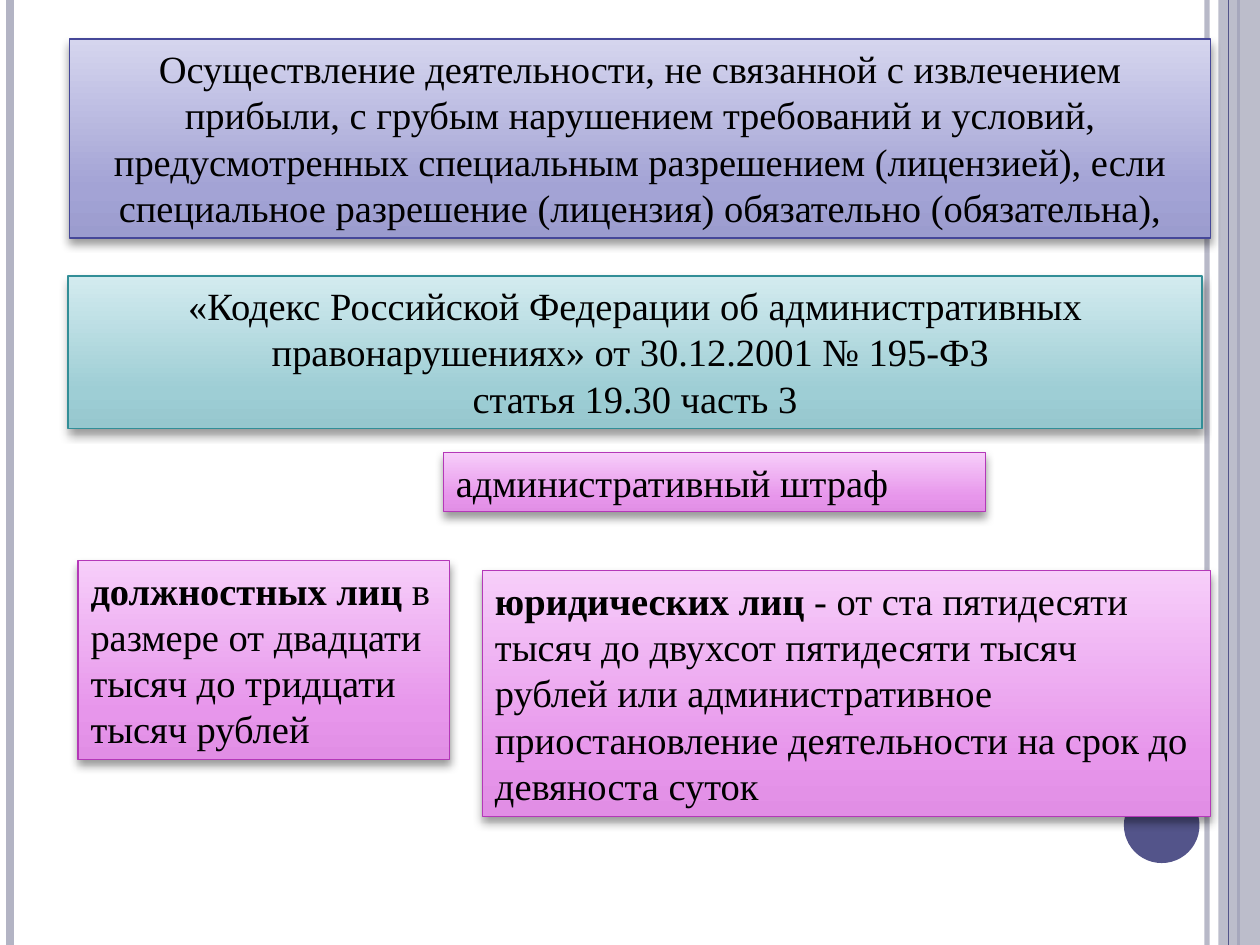
from dataclasses import dataclass

from lxml.etree import SubElement
from pptx import Presentation
from pptx.dml.color import RGBColor
from pptx.enum.shapes import MSO_CONNECTOR, MSO_SHAPE
from pptx.enum.text import MSO_ANCHOR, MSO_AUTO_SIZE, PP_ALIGN
from pptx.oxml.ns import qn
from pptx.util import Inches, Pt


@dataclass(frozen=True)
class Tone:
    line: str
    stops: tuple  # bottom to top, at 0, 25 and 100 percent


@dataclass(frozen=True)
class Theme:
    font: str = "Times New Roman"
    size: float = 22
    ink: str = "000000"
    rail: str = "B3B4C4"
    accent: str = "53548A"
    violet: Tone = Tone("454798", ("9B9CCE", "A3A3D5", "D5D5EE"))
    teal: Tone = Tone("328E97", ("96C7CE", "9ECED5", "D3EBEF"))
    pink: Tone = Tone("B438B8", ("E18EE5", "E796EB", "F7CEFA"))


def add(parent, tag, **attrs):
    return SubElement(parent, qn(tag), {k: str(v) for k, v in attrs.items()})


def fade(element, percent):
    """Set the opacity of the solid colour inside an element."""
    color = next(element.iter(qn("a:srgbClr")))
    add(color, "a:alpha", val=percent * 1000)


class Page:
    def __init__(self, slide, theme):
        self.shapes = slide.shapes
        self.theme = theme

    def rail(self, x, color, width, alpha=100):
        ends = [Inches(n) for n in (x, 0, x, 7.5)]
        rail = self.shapes.add_connector(MSO_CONNECTOR.STRAIGHT, *ends)
        rail.line.color.rgb = RGBColor.from_string(color)
        rail.line.width = Pt(width)
        props = rail._element.spPr
        if alpha < 100:
            fade(props, alpha)
        add(props, "a:effectLst")

    def plain(self, kind, place, color, alpha=100):
        shape = self.shapes.add_shape(kind, *map(Inches, place))
        shape.shadow.inherit = False
        shape.fill.solid()
        shape.fill.fore_color.rgb = RGBColor.from_string(color)
        shape.line.fill.background()
        if alpha < 100:
            fade(shape._element.spPr, alpha)

    def blend(self, box, stops):
        """Fill a box with a three-stop gradient that rises from the bottom."""
        box.fill.gradient()
        box.fill.gradient_angle = 90
        ramp = next(box._element.spPr.iter(qn("a:gsLst")))
        ramp.clear()
        for spot, color in zip((0, 25, 100), stops):
            stop = add(ramp, "a:gs", pos=spot * 1000)
            add(stop, "a:srgbClr", val=color)

    def shade(self, box):
        box.shadow.inherit = False
        effects = box._element.spPr.find(qn("a:effectLst"))
        shadow = add(effects, "a:outerShdw", blurRad=Pt(5.2), dist=Pt(3),
                     dir=90 * 60000, rotWithShape=0)
        color = add(shadow, "a:srgbClr", val=self.theme.ink)
        add(color, "a:alpha", val=40000)

    def card(self, place, tone, text, lead="", align=PP_ALIGN.LEFT):
        """Add a shaded text box; lead is the bold start of its text."""
        box = self.shapes.add_textbox(*map(Inches, place))
        self.blend(box, tone.stops)
        box.line.color.rgb = RGBColor.from_string(tone.line)
        box.line.width = Pt(0.75)
        self.shade(box)
        frame = box.text_frame
        style = {"word_wrap": True, "auto_size": MSO_AUTO_SIZE.SHAPE_TO_FIT_TEXT,
                 "vertical_anchor": MSO_ANCHOR.TOP}
        for name, value in style.items():
            setattr(frame, name, value)
        para = frame.paragraphs[0]
        para.alignment = align
        if lead:
            self.run(para, lead, True)
        for i, line in enumerate(text.split("\n")):
            if i:
                para.add_line_break()
            self.run(para, line)

    def run(self, para, text, bold=False):
        run = para.add_run()
        run.text = text
        style = {"name": self.theme.font, "size": Pt(self.theme.size), "bold": bold}
        for name, value in style.items():
            setattr(run.font, name, value)
        run.font.color.rgb = RGBColor.from_string(self.theme.ink)


def main():
    deck = Presentation()
    deck.slide_width, deck.slide_height = Inches(10), Inches(7.5)
    theme = Theme()
    page = Page(deck.slides.add_slide(deck.slide_layouts[6]), theme)

    page.rail(9.58, theme.rail, 3, 93)
    page.rail(0.08, theme.rail, 4.5)
    page.rail(9.83, theme.accent, 1.5)
    page.plain(MSO_SHAPE.RECTANGLE, (9.67, 0, 0.33, 7.5), theme.rail, 87)
    page.rail(9.75, theme.accent, 0.75)
    page.plain(MSO_SHAPE.OVAL, (8.92, 6.25, 0.6, 0.6), theme.accent)

    page.card((3.83, 4.53, 5.78, 1.95), theme.pink,
              "- от ста пятидесяти тысяч до двухсот пятидесяти тысяч рублей "
              "или административное приостановление деятельности на срок "
              "до девяноста суток", lead="юридических лиц ")
    page.card((0.55, 0.31, 9.06, 1.58), theme.violet,
              "Осуществление деятельности, не связанной с извлечением прибыли, "
              "с грубым нарушением требований и условий, предусмотренных "
              "специальным разрешением (лицензией), если специальное разрешение "
              "(лицензия) обязательно (обязательна),", align=PP_ALIGN.CENTER)
    page.card((0.54, 2.19, 9, 1.21), theme.teal,
              "«Кодекс Российской Федерации об административных "
              "правонарушениях» от 30.12.2001 № 195-ФЗ \nстатья 19.30 часть 3",
              align=PP_ALIGN.CENTER)
    page.card((3.52, 3.59, 4.3, 0.47), theme.pink, "административный штраф")
    page.card((0.62, 4.45, 2.95, 1.58), theme.pink,
              "в размере от двадцати тысяч до тридцати тысяч рублей",
              lead="должностных лиц ")
    deck.save("out.pptx")


if __name__ == "__main__":
    main()
